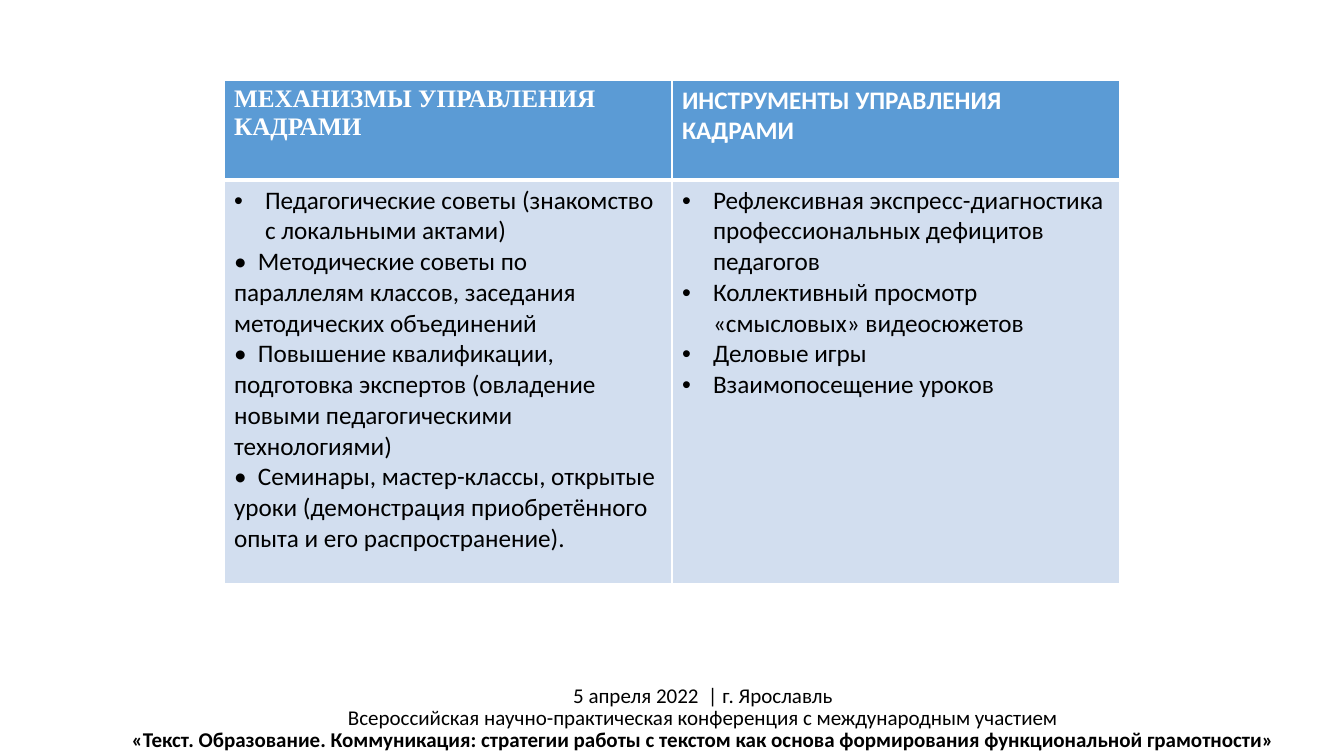
from dataclasses import dataclass

from lxml import etree
from pptx import Presentation
from pptx import util as u
from pptx.dml.color import RGBColor
from pptx.enum import text
from pptx.oxml import ns

SCALE = 914400 / 100.8


@dataclass(frozen=True)
class Theme:
    head: str = "5B9BD5"
    body: str = "D2DEEF"
    light: str = "FFFFFF"
    dark: str = "000000"
    sans: str = "Calibri"
    serif: str = "Times New Roman"
    cell: int = 18
    foot: int = 15
    lead: int = 16
    thin: int = 1
    thick: int = 3


THEME = Theme()
HEADS = [
    ("МЕХАНИЗМЫ УПРАВЛЕНИЯ КАДРАМИ", THEME.serif),
    ("ИНСТРУМЕНТЫ УПРАВЛЕНИЯ КАДРАМИ", THEME.sans),
]
LISTS = [
    [
        ("Педагогические советы (знакомство с локальными актами)", True),
        ("•  Методические советы по параллелям классов, заседания методических объединений", False),
        ("•  Повышение квалификации, подготовка экспертов (овладение новыми педагогическими технологиями)", False),
        ("•  Семинары, мастер-классы, открытые уроки (демонстрация приобретённого опыта и его распространение).", False),
    ],
    [
        ("Рефлексивная экспресс-диагностика профессиональных дефицитов педагогов", True),
        ("Коллективный просмотр «смысловых» видеосюжетов", True),
        ("Деловые игры", True),
        ("Взаимопосещение уроков", True),
    ],
]
EVENT = [
    "5 апреля 2022  | г. Ярославль",
    "Всероссийская научно-практическая конференция с международным участием",
]
TOPIC = "«Текст. Образование. Коммуникация: стратегии работы с текстом как основа формирования функциональной грамотности»"


def px(n):
    return u.Emu(round(n * SCALE))


def style(font, name, size, color, bold=False):
    font.name = name
    font.size = u.Pt(size)
    font.bold = bold
    font.color.rgb = RGBColor.from_string(color)


def bullet(para):
    props = para._p.get_or_add_pPr()
    props.set("marL", str(px(31)))
    props.set("indent", str(px(-31)))
    etree.SubElement(props, ns.qn("a:buFont"), typeface="Arial")
    etree.SubElement(props, ns.qn("a:buChar"), char="•")


def border(cell, top, bottom):
    props = cell._tc.get_or_add_tcPr()
    edges = {"L": THEME.thin, "R": THEME.thin, "T": top, "B": bottom}
    for side, width in edges.items():
        line = etree.SubElement(props, ns.qn(f"a:ln{side}"), w=str(u.Pt(width)))
        fill = etree.SubElement(line, ns.qn("a:solidFill"))
        etree.SubElement(fill, ns.qn("a:srgbClr"), val=THEME.light)


def paint(cell, color):
    cell.fill.solid()
    cell.fill.fore_color.rgb = RGBColor.from_string(color)


def head(cell, label, face):
    border(cell, THEME.thin, THEME.thick)
    paint(cell, THEME.head)
    cell.text = label
    style(cell.text_frame.paragraphs[0].font, face, THEME.cell, THEME.light, True)


def body(cell, items):
    border(cell, THEME.thick, THEME.thin)
    paint(cell, THEME.body)
    cell.text = "\n".join(label for label, _ in items)
    for para, (_, marked) in zip(cell.text_frame.paragraphs, items):
        if marked:
            bullet(para)
        style(para.font, THEME.sans, THEME.cell, THEME.dark)


def grid(slide):
    table = slide.shapes.add_table(2, 2, px(224), px(80), px(896), px(504)).table
    for row, high in zip(table.rows, (100, 404)):
        row.height = px(high)
    for col, (label, face) in enumerate(HEADS):
        head(table.cell(0, col), label, face)
        body(table.cell(1, col), LISTS[col])


def footer(slide):
    frame = slide.shapes.add_textbox(px(111), px(680), px(1184), px(78)).text_frame
    frame.word_wrap = True
    frame.auto_size = text.MSO_AUTO_SIZE.SHAPE_TO_FIT_TEXT
    para = frame.paragraphs[0]
    para.alignment = text.PP_ALIGN.CENTER
    para.line_spacing = u.Pt(THEME.lead)
    style(para.font, THEME.sans, THEME.foot, THEME.dark)
    for label in EVENT:
        para.add_run().text = label
        para.add_line_break()
    run = para.add_run()
    run.text = TOPIC
    style(run.font, THEME.sans, THEME.foot, THEME.dark, True)
    for run in para.runs[:-1]:
        style(run.font, THEME.sans, THEME.foot, THEME.dark)


def main():
    deck = Presentation()
    deck.slide_width, deck.slide_height = px(1344), px(756)
    slide = deck.slides.add_slide(deck.slide_layouts[6])
    footer(slide)
    grid(slide)
    deck.save("out.pptx")


if __name__ == "__main__":
    main()
